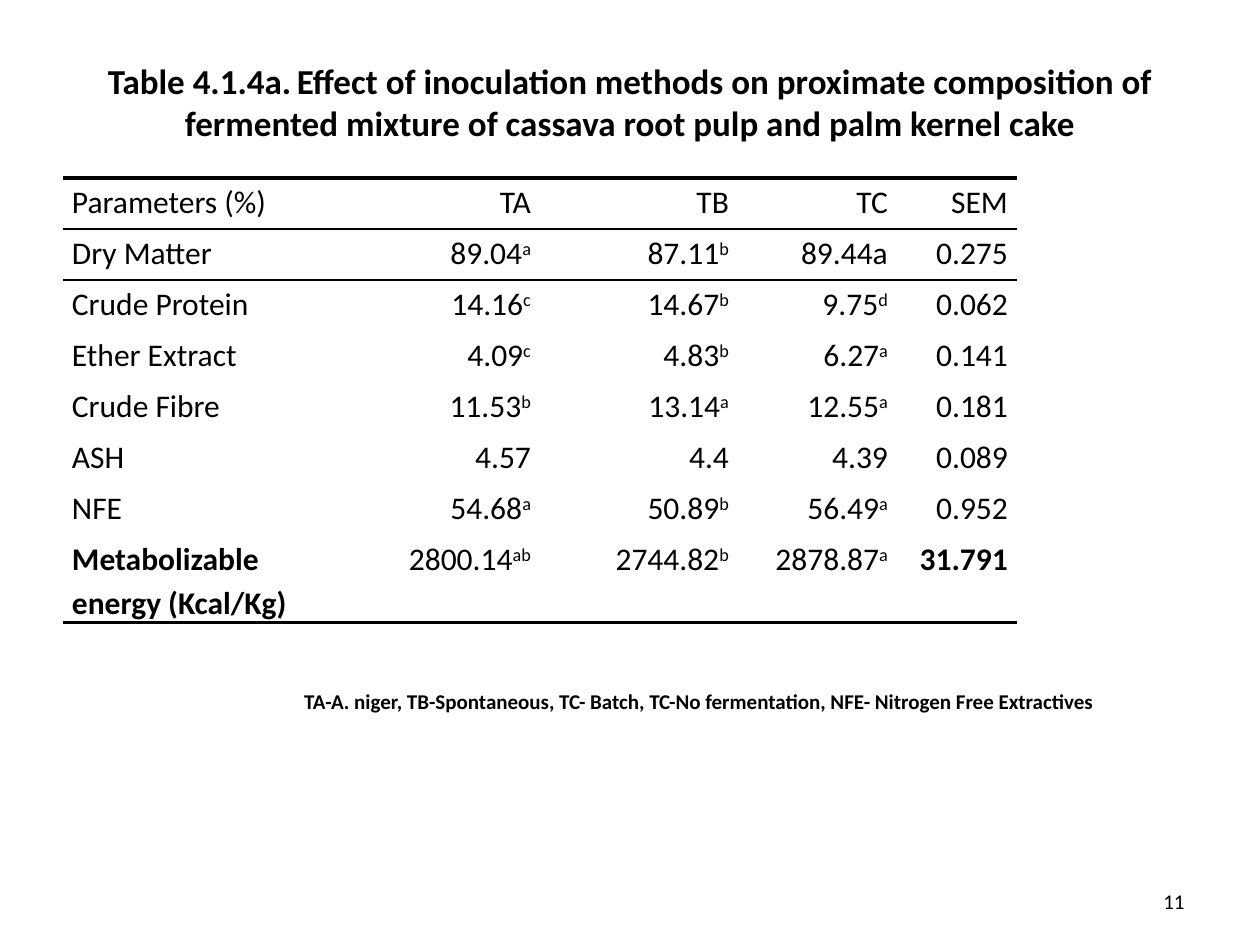
from dataclasses import dataclass

from lxml import etree
from pptx import Presentation
from pptx import util as u
from pptx.dml import color
from pptx.enum import text
from pptx.oxml import ns

SCALE = 914400 / 126


@dataclass(frozen=True)
class Theme:
    """Colours, font and type sizes."""
    font: str = "Calibri"
    ink: str = "000000"
    paper: str = "FFFFFF"
    title: int = 20
    body: int = 18
    small: int = 12
    thick: int = 2
    thin: int = 1


THEME = Theme()
LEFT, CENTER, RIGHT = text.PP_ALIGN.LEFT, text.PP_ALIGN.CENTER, text.PP_ALIGN.RIGHT
ROWS = [
    ["Parameters (%)", "TA", "TB", "TC", "SEM"],
    ["Dry Matter", "89.04^a", "87.11^b", "89.44a", "0.275"],
    ["Crude Protein", "14.16^c", "14.67^b", "9.75^d", "0.062"],
    ["Ether Extract", "4.09^c", "4.83^b", "6.27^a", "0.141"],
    ["Crude Fibre", "11.53^b", "13.14^a", "12.55^a", "0.181"],
    ["ASH", "4.57", "4.4", "4.39", "0.089"],
    ["NFE", "54.68^a", "50.89^b", "56.49^a", "0.952"],
    ["Metabolizable energy (Kcal/Kg)", "2800.14^ab", "2744.82^b", "2878.87^a", "31.791"],
]
COLUMNS = [289, 188, 198, 159, 120]
HEIGHTS = [51] * 7 + [88]
RULES = {0: THEME.thick, 1: THEME.thin, 2: THEME.thin, len(ROWS): THEME.thick}


def px(n):
    """Turn pixels into EMU."""
    return u.Emu(round(n * SCALE))


def add_run(p, words, size, bold=False, raised=False):
    """Add one styled run to a paragraph."""
    r = p.add_run()
    r.text = words
    r.font.name, r.font.size, r.font.bold = THEME.font, u.Pt(size), bold
    r.font.color.rgb = color.RGBColor.from_string(THEME.ink)
    if raised:
        r._r.get_or_add_rPr().set("baseline", "30000")


def add_label(s, box, words, size, align, bold=False):
    """Place a wrapped, vertically centred line of text in a box."""
    sp = s.shapes.add_textbox(*map(px, box))
    tf = sp.text_frame
    tf.word_wrap = True
    tf.vertical_anchor = text.MSO_ANCHOR.MIDDLE
    p = tf.paragraphs[0]
    p.alignment = align
    add_run(p, words, size, bold)


def set_borders(cell, top, bottom):
    """Draw the horizontal rules of a cell and hide its other edges."""
    tc_pr = cell._tc.get_or_add_tcPr()
    edges = {"lnL": None, "lnR": None, "lnT": top, "lnB": bottom}
    for i, (tag, width) in enumerate(edges.items()):
        ln = etree.Element(ns.qn(f"a:{tag}"))
        if width:
            ln.set("w", str(u.Pt(width)))
            fill = etree.SubElement(ln, ns.qn("a:solidFill"))
            etree.SubElement(fill, ns.qn("a:srgbClr"), val=THEME.ink)
        else:
            etree.SubElement(ln, ns.qn("a:noFill"))
        tc_pr.insert(i, ln)


def fill_cell(cell, words, align, bold):
    """Write a value, raising whatever follows a caret."""
    cell.fill.solid()
    cell.fill.fore_color.rgb = color.RGBColor.from_string(THEME.paper)
    cell.margin_left = cell.margin_right = px(9)
    cell.margin_top = cell.margin_bottom = 0
    p = cell.text_frame.paragraphs[0]
    p.alignment, p.line_spacing, p.space_after = align, 1.15, u.Pt(10)
    value, _, mark = words.partition("^")
    add_run(p, value, THEME.body, bold)
    if mark:
        add_run(p, mark, THEME.body, bold, raised=True)


def add_results(s, left, top):
    """Place the composition table with its corner at left, top."""
    box = (left, top, sum(COLUMNS), sum(HEIGHTS))
    tbl = s.shapes.add_table(len(ROWS), len(COLUMNS), *map(px, box)).table
    tbl.first_row = tbl.horz_banding = False
    for column, width in zip(tbl.columns, COLUMNS):
        column.width = px(width)
    for i, values in enumerate(ROWS):
        tbl.rows[i].height = px(HEIGHTS[i])
        for j, words in enumerate(values):
            cell = tbl.cell(i, j)
            bold = i == len(ROWS) - 1 and j in (0, len(COLUMNS) - 1)
            fill_cell(cell, words, RIGHT if j else LEFT, bold)
            set_borders(cell, RULES.get(i), RULES.get(i + 1))


def build_slide(prs):
    """Lay out the title, table, key and page number."""
    s = prs.slides.add_slide(prs.slide_layouts[6])
    add_label(s, (63, 38, 1134, 127),
              "Table 4.1.4a.\tEffect of inoculation methods on proximate composition of "
              "fermented mixture of cassava root pulp and palm kernel cake",
              THEME.title, CENTER, bold=True)
    add_results(s, 63, 178)
    add_label(s, (903, 876, 294, 50), "11", THEME.small, RIGHT)
    add_label(s, (243, 671, 912, 60),
              "TA-A. niger, TB-Spontaneous, TC- Batch, TC-No fermentation, "
              "NFE- Nitrogen Free Extractives",
              THEME.small, CENTER, bold=True)


def main():
    """Build and save the presentation."""
    prs = Presentation()
    prs.slide_width, prs.slide_height = px(1260), px(945)
    build_slide(prs)
    prs.save("out.pptx")


if __name__ == "__main__":
    main()
